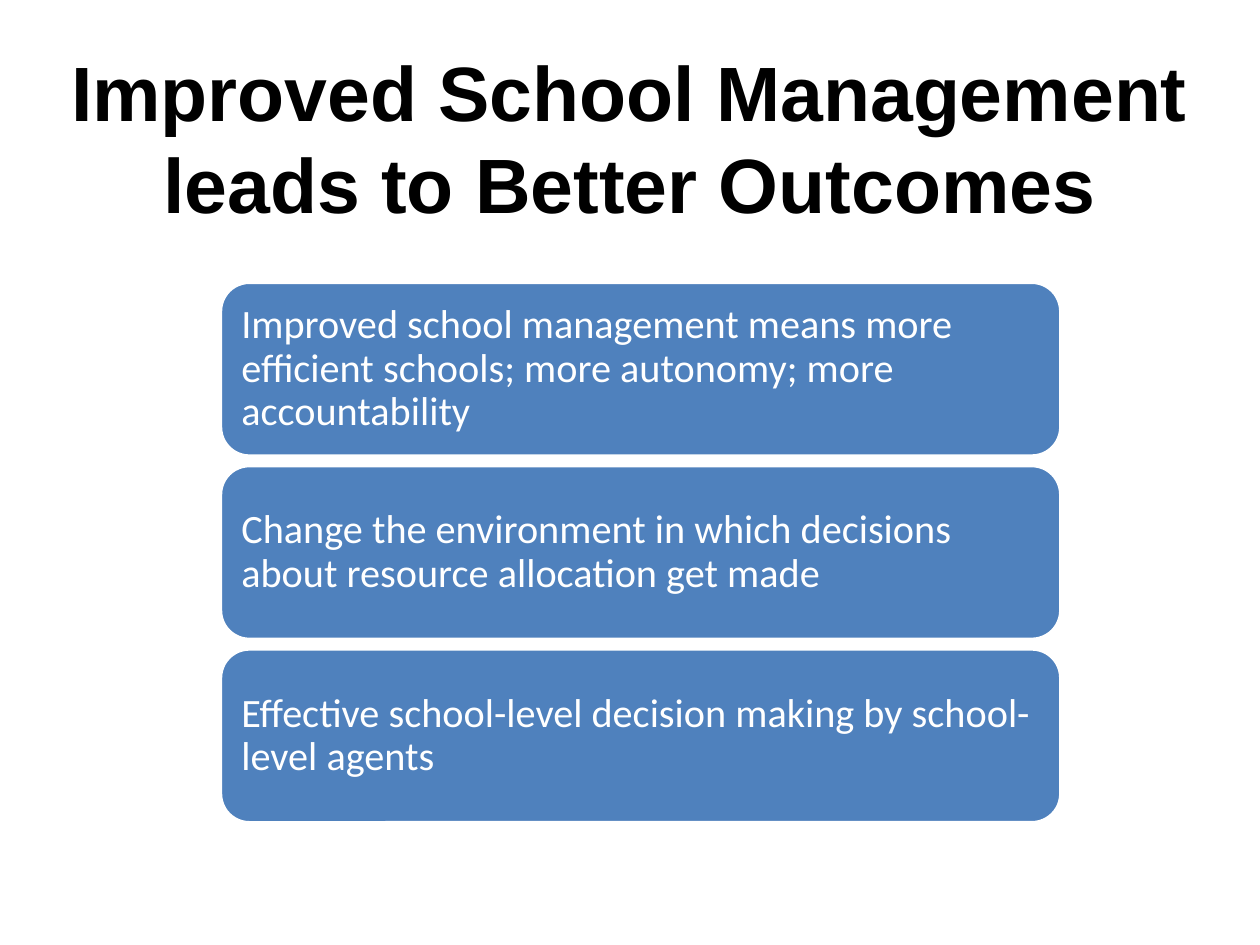
from dataclasses import dataclass

from pptx import Presentation
from pptx.dml.color import RGBColor
from pptx.enum.shapes import MSO_SHAPE
from pptx.enum.text import MSO_ANCHOR, PP_ALIGN
from pptx.util import Inches, Pt

ROUNDED = MSO_SHAPE.ROUNDED_RECTANGLE
MIDDLE = MSO_ANCHOR.MIDDLE
LEFT, CENTER = PP_ALIGN.LEFT, PP_ALIGN.CENTER

BLUE, WHITE, BLACK = "4F81BD", "FFFFFF", "000000"
CARD_LEFT, CARD_TOP, CARD_WIDTH, CARD_HEIGHT = 1.75, 2.24, 6.67, 1.38
CARD_STEP = 1.455


@dataclass
class Card:
    text: str
    top: float


MESSAGES = [
    "Improved school management means more efficient schools; more autonomy; more accountability",
    "Change the environment in which decisions about resource allocation get made",
    "Effective school-level decision making by school-level agents",
]


def color(value: str) -> RGBColor:
    return RGBColor.from_string(value)


def write(shape, text: str, *, font: str, size: float, ink: str,
          bold: bool = False, align=LEFT, spacing: float = 1.0,
          inset: float = 0.1) -> None:
    frame = shape.text_frame
    frame.word_wrap = True
    frame.vertical_anchor = MIDDLE
    frame.margin_left = frame.margin_right = Inches(0.1)
    frame.margin_top = frame.margin_bottom = Inches(inset)
    para = frame.paragraphs[0]
    para.alignment = align
    para.line_spacing = spacing
    span = para.add_run()
    span.text = text
    span.font.name = font
    span.font.size = Pt(size)
    span.font.bold = bold
    span.font.color.rgb = color(ink)


def draw_title(page, text: str) -> None:
    box = page.shapes.add_textbox(Inches(0), Inches(0.25), Inches(10), Inches(1.67))
    write(box, text, font="Arial", size=44, ink=BLACK, bold=True,
          align=CENTER, inset=0.05)


def draw_card(page, card: Card) -> None:
    box = page.shapes.add_shape(ROUNDED, Inches(CARD_LEFT), Inches(card.top),
                                Inches(CARD_WIDTH), Inches(CARD_HEIGHT))
    box.shadow.inherit = False
    box.fill.solid()
    box.fill.fore_color.rgb = color(BLUE)
    box.line.color.rgb = color(WHITE)
    box.line.width = Pt(2)
    write(box, card.text, font="Calibri", size=23, ink=WHITE, spacing=0.9)


def main() -> None:
    deck = Presentation()
    deck.slide_width, deck.slide_height = Inches(10), Inches(7.5)
    page = deck.slides.add_slide(deck.slide_layouts[6])
    draw_title(page, "Improved School Management leads to Better Outcomes")
    for index, message in enumerate(MESSAGES):
        draw_card(page, Card(message, CARD_TOP + index * CARD_STEP))
    deck.save("out.pptx")


if __name__ == "__main__":
    main()
